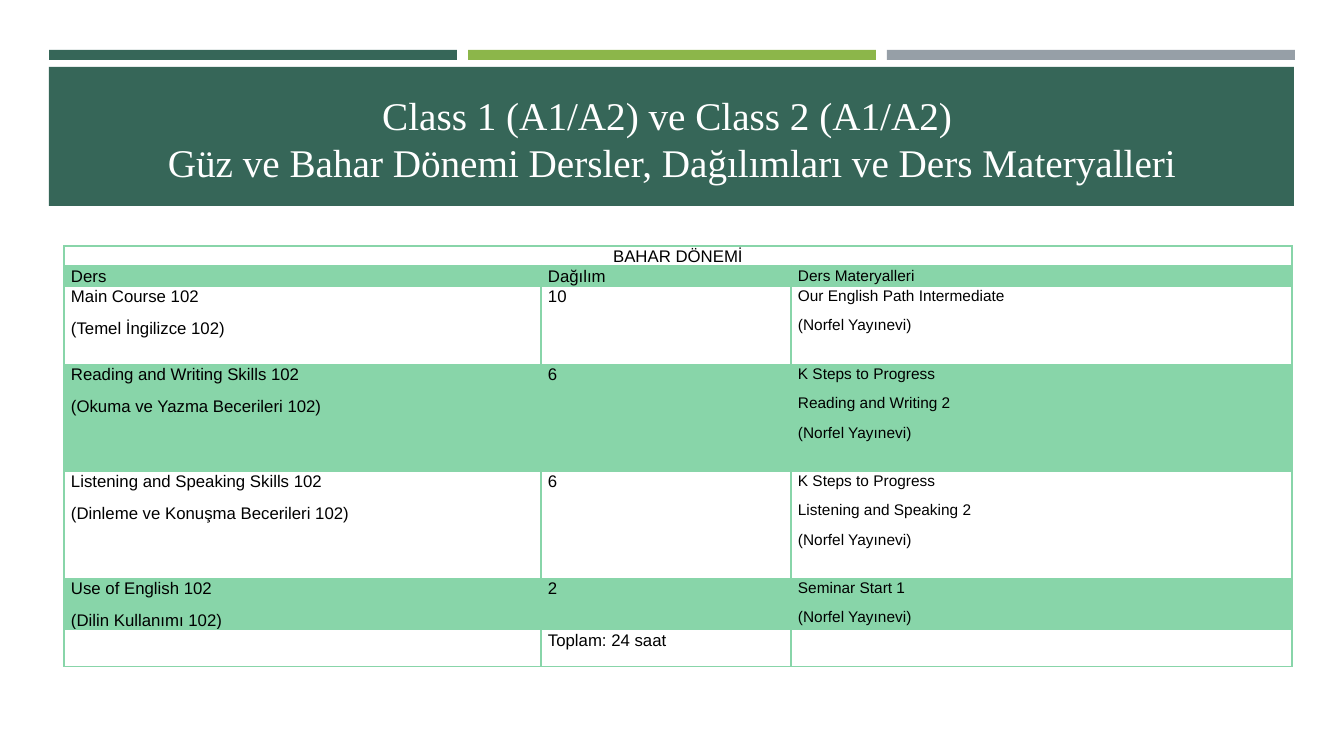
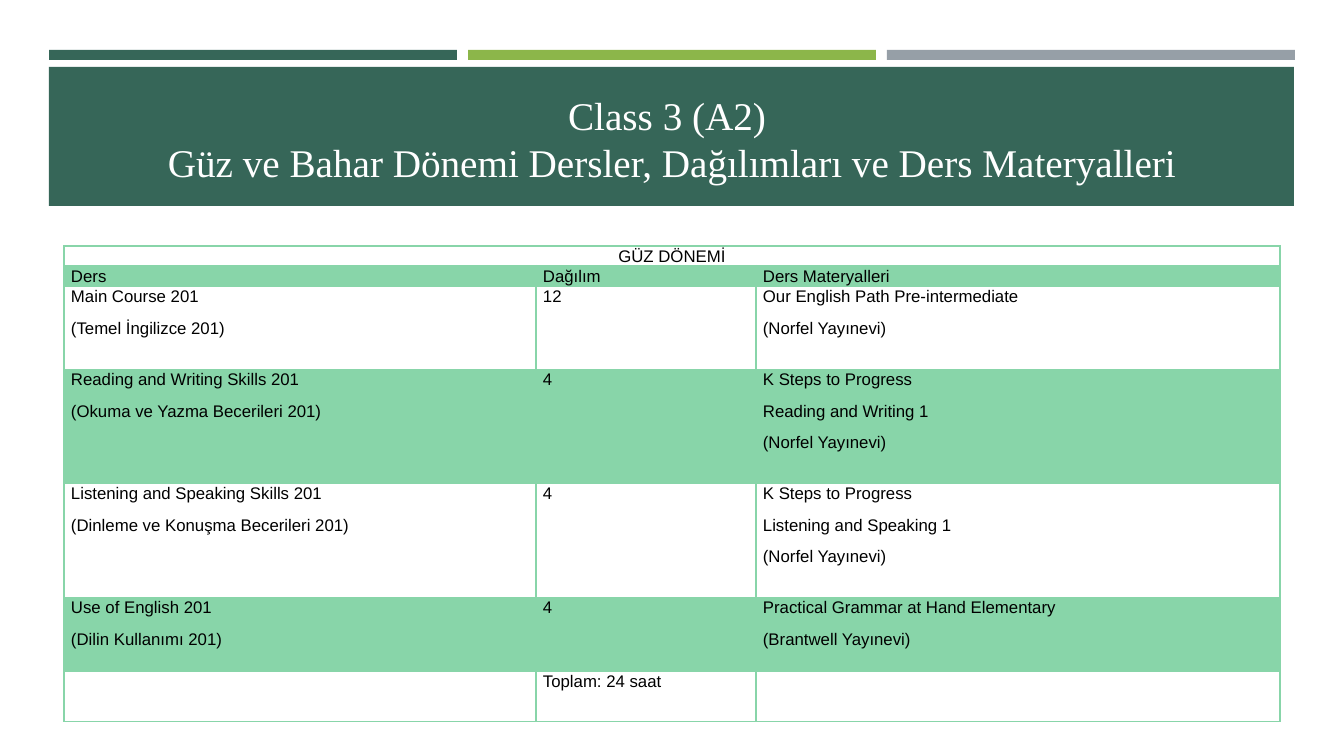
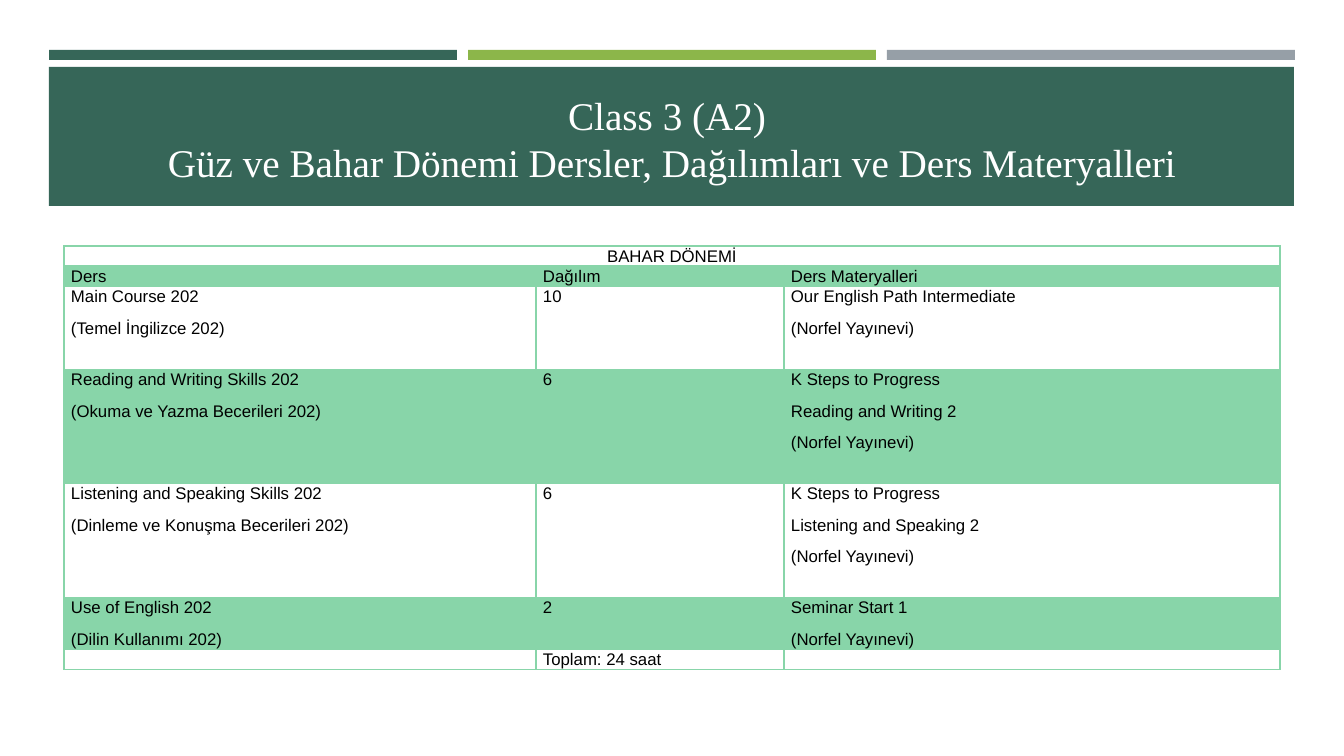
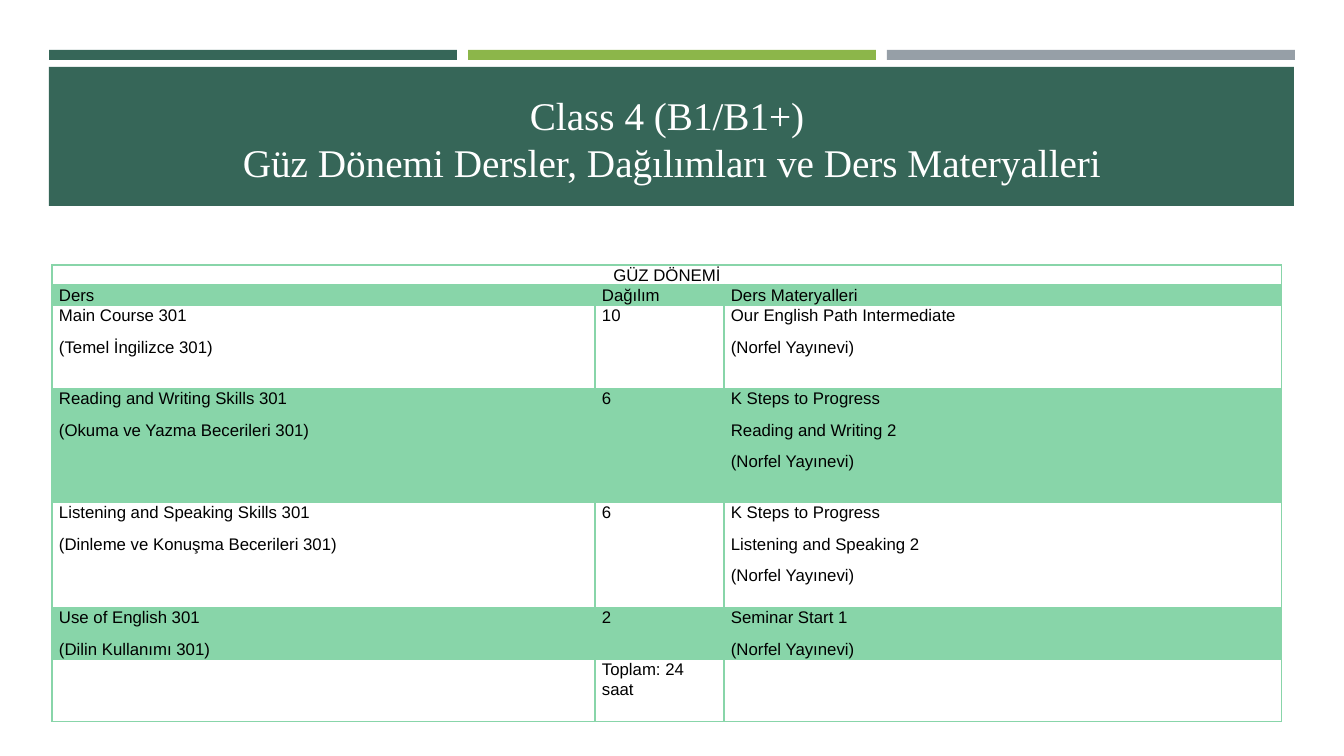
import lxml.etree
import pptx
import pptx.dml.color
import pptx.enum.shapes
import pptx.enum.text
import pptx.oxml.ns
import pptx.util

PX = 914400 / 100.8
HUES = {"green": "366658", "lime": "8CB64A", "grey": "969FA7",
        "mint": "88D5A9", "white": "FFFFFF", "black": "000000"}
TITLE_FONT, BODY_FONT = "Times New Roman", "Arial"
ALIGN = pptx.enum.text.PP_ALIGN

PUB = "(Norfel Yayınevi)"
COURSES = [("Main Course", "Temel İngilizce"),
           ("Reading and Writing Skills", "Okuma ve Yazma Becerileri"),
           ("Listening and Speaking Skills", "Dinleme ve Konuşma Becerileri"),
           ("Use of English", "Dilin Kullanımı")]
SEMINAR = ["Seminar Start 1", PUB]
BOTH = "Güz ve Bahar Dönemi"

# Each plan: title, term, course code, hours, main book level, skills level,
# last book, table corner, columns, rows, size of the materials text
PLANS = [
    dict(head="Class 1 (A1/A2) ve Class 2 (A1/A2) ", terms=BOTH,
         term="BAHAR DÖNEMİ", code=102, hours=[10, 6, 6, 2],
         level="Intermediate", skill=2, last=SEMINAR, at=(64, 246),
         cols=[477, 250, 501], rows=[20, 20, 78, 107, 107, 51, 37], size=11),
    dict(head="Class 3 (A2) ", terms=BOTH,
         term="GÜZ DÖNEMİ", code=201, hours=[12, 4, 4, 4],
         level="Pre-intermediate", skill=1,
         last=["Practical Grammar at Hand Elementary", "(Brantwell Yayınevi)"],
         at=(64, 246), cols=[472, 220, 524],
         rows=[20, 20, 83, 114, 114, 74, 50], size=12),
    dict(head="Class 3 (A2) ", terms=BOTH,
         term="BAHAR DÖNEMİ", code=202, hours=[10, 6, 6, 2],
         level="Intermediate", skill=2, last=SEMINAR, at=(64, 246),
         cols=[472, 248, 496], rows=[20, 20, 83, 114, 114, 52, 20], size=12),
    dict(head="Class 4 (B1/B1+) ", terms="Güz Dönemi",
         term="GÜZ DÖNEMİ", code=301, hours=[10, 6, 6, 2],
         level="Intermediate", skill=2, last=SEMINAR, at=(52, 265),
         cols=[543, 129, 558], rows=[20, 20, 83, 114, 105, 52, 62], size=12),
]


def px(n):
    return pptx.util.Emu(round(n * PX))


def hue(name):
    return pptx.dml.color.RGBColor.from_string(HUES[name])


def node(parent, tag, **attrs):
    return lxml.etree.SubElement(parent, pptx.oxml.ns.qn(tag), **attrs)


def write(para, text, font, size, color):
    run = para.add_run()
    run.text = text
    run.font.name = font
    run.font.size = pptx.util.Pt(size)
    run.font.bold = False
    run.font.color.rgb = hue(color)


def place(shape, x, y, w, h):
    shape.left, shape.top, shape.width, shape.height = map(px, (x, y, w, h))


def bar(slide, layout, box, color):
    """Draw a plain bar and hand it over to the layout."""
    shape = slide.shapes.add_shape(
        pptx.enum.shapes.MSO_SHAPE.RECTANGLE, *map(px, box))
    shape.shadow.inherit = False
    shape.fill.solid()
    shape.fill.fore_color.rgb = hue(color)
    shape.line.fill.background()
    tree = layout.shapes._spTree
    shape._element.nvSpPr.cNvPr.set("id", str(100 + len(tree)))
    tree.append(shape._element)


def frame(slide, layout, x, y, w):
    """Set up the shared bars and title place."""
    wide, step = 408, 419
    for i, color in enumerate(("green", "lime", "grey")):
        bar(slide, layout, (x + i * step, y, wide, 10), color)
    bar(slide, layout, (x, y + 17, w, 139), "green")
    title = layout.placeholders[0]
    place(title, x + 15, y + 31, w - 29, 109)
    title.text_frame.vertical_anchor = pptx.enum.text.MSO_ANCHOR.BOTTOM
    title.text_frame.auto_size = pptx.enum.text.MSO_AUTO_SIZE.NONE


def head(slide, plan):
    para = slide.shapes.title.text_frame.paragraphs[0]
    para.alignment = ALIGN.CENTER
    write(para, plan["head"], TITLE_FONT, 28, "white")
    para.add_line_break()
    write(para, plan["terms"] + " Dersler, Dağılımları ve Ders Materyalleri",
          TITLE_FONT, 28, "white")


def edge(cell, under):
    """Rule the four sides of a cell; under is the width below it."""
    props = cell._tc.get_or_add_tcPr()
    for side, width in (("L", 1), ("R", 1), ("T", 1), ("B", under)):
        line = node(props, "a:ln" + side, w=str(pptx.util.Pt(width)))
        node(node(line, "a:solidFill"), "a:srgbClr", val=HUES["mint"])


def tint(cell, on):
    if not on:
        cell.fill.background()
        return
    cell.fill.solid()
    cell.fill.fore_color.rgb = hue("mint")
    color = cell._tc.tcPr.find(".//" + pptx.oxml.ns.qn("a:solidFill")
                               + "[last()]/..")
    fill = color.findall(pptx.oxml.ns.qn("a:solidFill"))[-1]
    node(fill[0], "a:alpha", val="20000")


def fill(cell, lines, size, align):
    cell.margin_left = cell.margin_right = px(7)
    cell.margin_top = cell.margin_bottom = 0
    body = cell.text_frame
    if not lines:
        node(body.paragraphs[0]._p, "a:endParaRPr", sz=str(size * 100))
    for i, text in enumerate(lines):
        para = body.add_paragraph() if i else body.paragraphs[0]
        para.alignment = align
        para.line_spacing = 1.07
        para.space_before = pptx.util.Pt(8 if i else 0)
        write(para, text, BODY_FONT, size, "black")


def lessons(plan):
    """List the table rows, each cell as a list of lines."""
    skill = plan["skill"]
    books = [["Our English Path " + plan["level"], PUB]]
    for pair in ("Reading and Writing", "Listening and Speaking"):
        books.append(["K Steps to Progress", f"{pair} {skill}", PUB])
    books.append(plan["last"])
    rows = [[[plan["term"]], [], []],
            [["Ders"], ["Dağılım"], ["Ders Materyalleri"]]]
    for (name, local), hours, book in zip(COURSES, plan["hours"], books):
        code = plan["code"]
        rows.append([[f"{name} {code}", f"({local} {code})"],
                     [str(hours)], book])
    return rows + [[[], ["Toplam: 24 saat"], []]]


def grid(slide, plan):
    cols, rows = plan["cols"], plan["rows"]
    box = (*plan["at"], sum(cols), sum(rows))
    table = slide.shapes.add_table(len(rows), len(cols), *map(px, box)).table
    table.first_row = table.horz_banding = False
    for col, width in zip(table.columns, cols):
        col.width = px(width)
    for row, height in zip(table.rows, rows):
        row.height = px(height)
    table.cell(0, 0).merge(table.cell(0, len(cols) - 1))
    for r, row in enumerate(lessons(plan)):
        for c, lines in enumerate(row):
            cell = table.cell(r, c)
            size = plan["size"] if c == 2 else 12
            fill(cell, lines, size, ALIGN.LEFT if r else ALIGN.CENTER)
            edge(cell, 1 if r else 2)
            tint(cell, r % 2 == 1)


def main():
    deck = pptx.Presentation()
    deck.slide_width, deck.slide_height = px(1344), px(756)
    layout = deck.slide_layouts[5]
    for i, plan in enumerate(PLANS):
        slide = deck.slides.add_slide(layout)
        if i == 0:
            frame(slide, layout, 49, 50, 1245)
        head(slide, plan)
        grid(slide, plan)
    deck.save("out.pptx")


if __name__ == "__main__":
    main()
